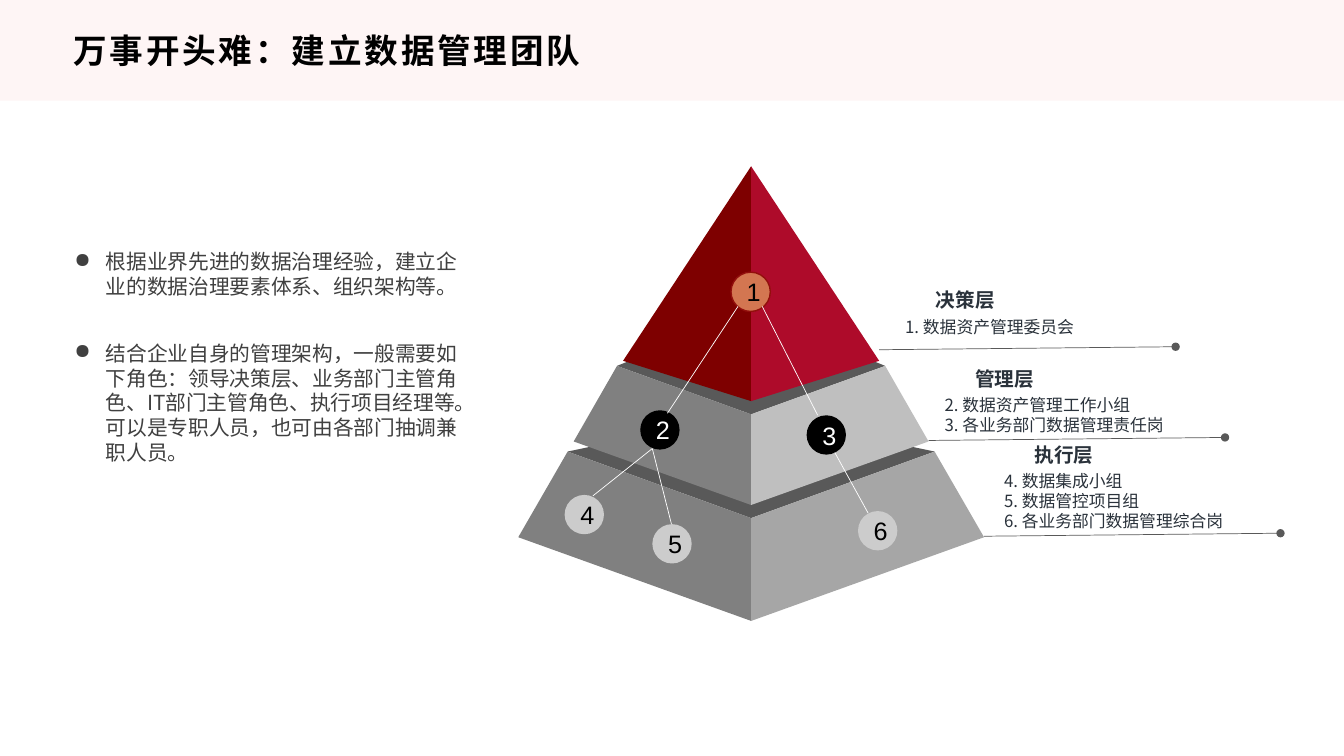
"""Build the slide on setting up a data management team."""
from lxml import etree
from pptx import Presentation
from pptx.dml.color import RGBColor
from pptx.enum.shapes import MSO_CONNECTOR, MSO_SHAPE
from pptx.enum.text import MSO_ANCHOR, PP_ALIGN
from pptx.oxml.ns import qn
from pptx.util import Inches, Pt

STRAIGHT = MSO_CONNECTOR.STRAIGHT
RECTANGLE, OVAL = MSO_SHAPE.RECTANGLE, MSO_SHAPE.OVAL
MIDDLE, TOP = MSO_ANCHOR.MIDDLE, MSO_ANCHOR.TOP
LEFT, CENTER = PP_ALIGN.LEFT, PP_ALIGN.CENTER

COLORS = {
    "band": "FEF5F5", "black": "000000", "white": "FFFFFF", "body": "404040",
    "label": "2A323B", "lid": "595959", "dark red": "7E0000", "red": "AE0B2A",
    "gray": "808080", "light gray": "BFBFBF", "mid gray": "A6A6A6",
    "orange": "D37651", "ring": "920F0C", "silver": "CCCCCC",
}
FORMATS = {
    "title": {"size": Pt(24), "bold": True, "name": "Noto Sans CJK JP"},
    "body": {"size": Pt(14.8), "name": "Noto Sans CJK SC"},
    "heading": {"size": Pt(14), "bold": True, "name": "Noto Sans CJK SC"},
    "item": {"size": Pt(12), "name": "Noto Sans CJK SC"},
    "number": {"size": Pt(18), "name": "Arial"},
}
COLUMNS, ROWS = 13.33, 7.5

TITLE = "万事开头难：建立数据管理团队"
POINTS = [
    "根据业界先进的数据治理经验，建立企业的数据治理要素体系、组织架构等。",
    "结合企业自身的管理架构，一般需要如下角色：领导决策层、业务部门主管角色、"
    "IT部门主管角色、执行项目经理等。可以是专职人员，也可由各部门抽调兼职人员。",
]
AXIS = 7.45
TIERS = [
    {"back": 4.1, "front": (5.14, 6.16), "sides": [(1.82, 4.48), (2.31, 5.33)],
     "faces": ("gray", "mid gray"), "heading": "执行层", "label": (10.16, 4.34),
     "items": ["4. 数据集成小组", "5. 数据管控项目组", "6. 各业务部门数据管理综合岗"]},
    {"back": 3.09, "front": (4.11, 5.01), "sides": [(1.33, 3.63), (1.76, 4.38)],
     "faces": ("gray", "light gray"), "heading": "管理层", "label": (9.57, 3.59),
     "items": ["2. 数据资产管理工作小组", "3. 各业务部门数据管理责任岗"]},
    {"back": None, "front": (1.65, 3.98), "sides": [(1.27, 3.58)],
     "faces": ("dark red", "red"), "heading": "决策层", "label": (9.18, 2.81),
     "items": ["1. 数据资产管理委员会"]},
]
RULE_DROP = {"决策层": -0.11, "管理层": -0.01, "执行层": -0.01}
RULE_WIDTH, RULE_RISE = 2.94, 0.03
HEADING_WIDTH, ITEM_INDENT, ITEM_DROP, ITEM_WIDTH = 0.79, 0.3, 0.28, 2.84
DIAMETER = 0.39
NODES = [
    (7.25, 2.7, "orange", "black", "ring"),
    (6.35, 4.07, "black", "white", None),
    (8, 4.12, "black", "white", None),
    (5.6, 4.91, "silver", "black", None),
    (6.47, 5.2, "silver", "black", None),
    (8.51, 5.07, "silver", "black", None),
]
LINKS = [
    (7.32, 3.04, 6.62, 4.1), (7.56, 3.04, 8.11, 4.12),
    (6.47, 4.45, 5.88, 4.92), (6.47, 4.45, 6.66, 5.2), (8.28, 4.49, 8.61, 5.09),
]


def color(name):
    return RGBColor.from_string(COLORS[name])


def paint(shape, fill, outline=None):
    shape.shadow.inherit = False
    shape.fill.solid()
    shape.fill.fore_color.rgb = color(fill)
    if outline:
        shape.line.color.rgb = color(outline)
        shape.line.width = Pt(1)
    else:
        shape.line.fill.background()


def write(shape, lines, style, ink, align=LEFT, anchor=TOP, wrap=True, spacing=None, bullet=None):
    frame = shape.text_frame
    frame.word_wrap = wrap
    frame.vertical_anchor = anchor
    for index, line in enumerate(lines):
        paragraph = frame.add_paragraph() if index else frame.paragraphs[0]
        paragraph.alignment = align
        if bullet:
            properties = paragraph._p.get_or_add_pPr()
            properties.set("marL", str(Inches(0.31)))
            properties.set("indent", str(-Inches(0.31)))
            etree.SubElement(properties, qn("a:buChar")).set("char", bullet)
            if index:
                paragraph.space_before = Pt(30)
        run = paragraph.add_run()
        run.text = line
        for key, value in FORMATS[style].items():
            setattr(run.font, key, value)
        run.font.color.rgb = color(ink)
        properties = run._r.get_or_add_rPr()
        etree.SubElement(properties, qn("a:ea")).set("typeface", FORMATS[style]["name"])
        if spacing:
            properties.set("spc", str(spacing))


def add_text(slide, place, lines, style, ink, **options):
    box = slide.shapes.add_textbox(*map(Inches, place))
    write(box, lines, style, ink, **options)


def add_polygon(slide, points, fill):
    corners = [(Inches(x), Inches(y)) for x, y in points]
    builder = slide.shapes.build_freeform(*corners[0])
    builder.add_line_segments(corners[1:], close=True)
    paint(builder.convert_to_shape(), fill)


def add_line(slide, ends, ink, dot=False):
    connector = slide.shapes.add_connector(STRAIGHT, *map(Inches, ends))
    connector.line.color.rgb = color(ink)
    connector.line.width = Pt(0.5)
    if dot:
        etree.SubElement(connector.line._get_or_add_ln(), qn("a:tailEnd")).set("type", "oval")
    etree.SubElement(connector._element.spPr, qn("a:effectLst"))


def add_tier(slide, tier):
    top, bottom = tier["front"]
    sides = tier["sides"]
    if tier["back"]:
        width, height = sides[0]
        lid = [(AXIS, tier["back"]), (AXIS - width, height), (AXIS, top), (AXIS + width, height)]
        add_polygon(slide, lid, "lid")
    for direction, fill in zip((-1, 1), tier["faces"]):
        edge = [(AXIS + direction * width, height) for width, height in reversed(sides)]
        add_polygon(slide, [(AXIS, top), (AXIS, bottom)] + edge, fill)


def add_label(slide, tier):
    left, top = tier["label"]
    add_text(slide, (left, top, HEADING_WIDTH, 0.34), [tier["heading"]], "heading", "label",
             align=CENTER, wrap=False)
    place = (left - ITEM_INDENT, top + ITEM_DROP, ITEM_WIDTH, 0.1 + 0.2 * len(tier["items"]))
    add_text(slide, place, tier["items"], "item", "label")
    width, height = tier["sides"][-1]
    start, level = AXIS + width, height + RULE_DROP[tier["heading"]]
    add_line(slide, (start, level, start + RULE_WIDTH, level - RULE_RISE), "lid", dot=True)


def main():
    presentation = Presentation()
    presentation.slide_width, presentation.slide_height = Inches(COLUMNS), Inches(ROWS)
    slide = presentation.slides.add_slide(presentation.slide_layouts[6])
    band = slide.shapes.add_shape(RECTANGLE, 0, 0, Inches(COLUMNS), Inches(1))
    paint(band, "band")
    add_text(slide, (0.63, 0.26, 12.07, 0.48), [TITLE], "title", "black", anchor=MIDDLE, spacing=200)
    add_text(slide, (0.64, 2.42, 4.09, 2.74), POINTS, "body", "body", bullet="●")
    for tier in TIERS:
        add_tier(slide, tier)
        add_label(slide, tier)
    for number, (left, top, fill, ink, outline) in enumerate(NODES, 1):
        node = slide.shapes.add_shape(OVAL, *map(Inches, (left, top, DIAMETER, DIAMETER)))
        paint(node, fill, outline)
        write(node, [str(number)], "number", ink, align=CENTER, anchor=MIDDLE)
    for ends in LINKS:
        add_line(slide, ends, "white")
    presentation.save("out.pptx")


if __name__ == "__main__":
    main()
